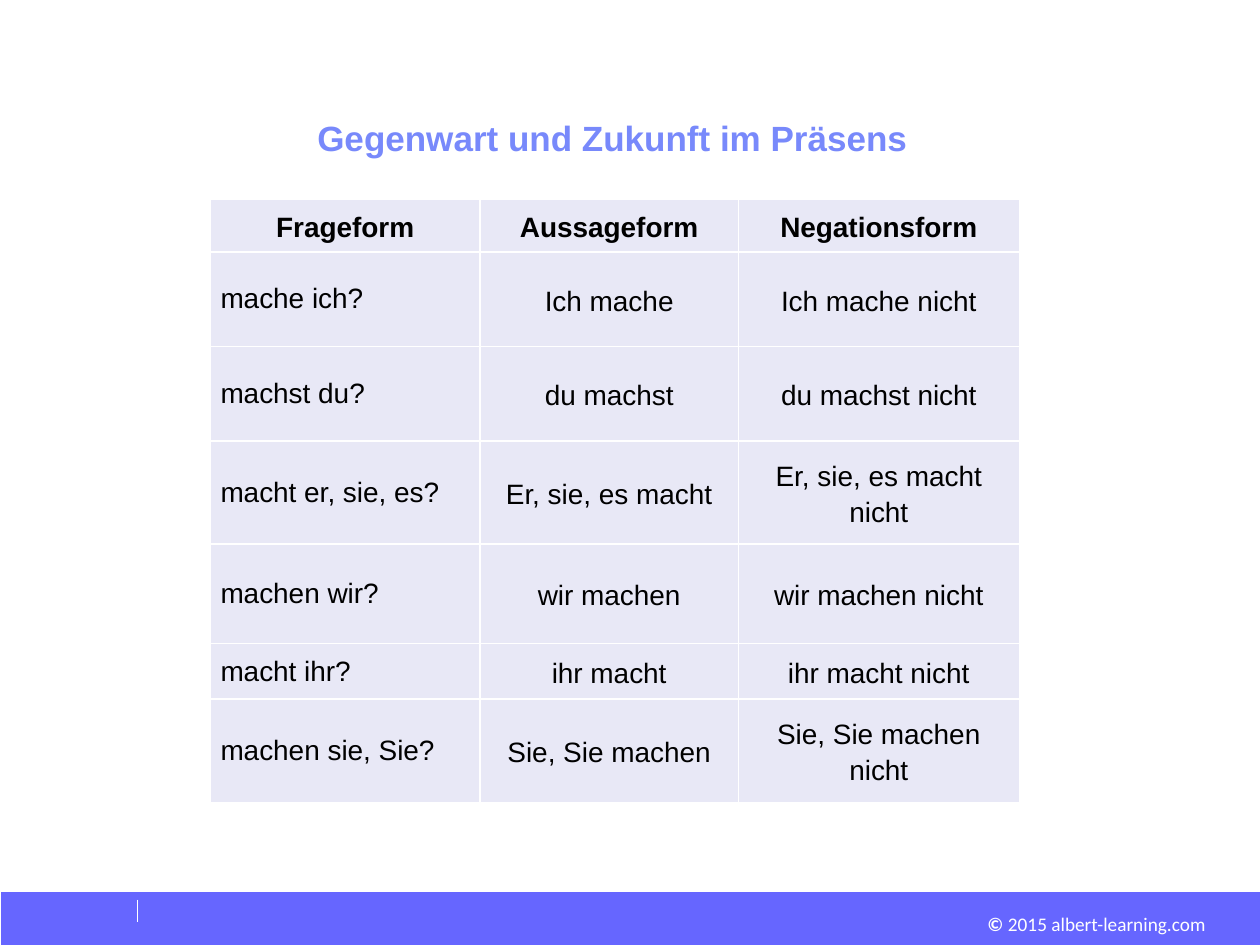
from dataclasses import dataclass

from lxml.etree import SubElement
from pptx import Presentation
from pptx.dml.color import RGBColor
from pptx.enum.shapes import MSO_CONNECTOR, MSO_SHAPE
from pptx.enum.text import MSO_ANCHOR, PP_ALIGN
from pptx.oxml.ns import qn
from pptx.util import Inches, Pt


@dataclass(frozen=True)
class Theme:
    title_color: str = "7889FB"
    text_color: str = "000000"
    cell_color: str = "E8E8F6"
    footer_color: str = "6666FF"
    white: str = "FFFFFF"
    body_font: str = "Arial"
    footer_font: str = "Calibri"
    title_size: float = 20
    table_size: float = 16
    footer_size: float = 11


class SlideBuilder:
    def __init__(self, slide, theme):
        self.slide = slide
        self.theme = theme

    def format_run(self, run, font, size, color, bold=False):
        run.font.name = font
        run.font.size = Pt(size)
        run.font.bold = bold
        run.font.color.rgb = RGBColor.from_string(color)

    def add_bar(self, left, top, width, height):
        bar = self.slide.shapes.add_shape(
            MSO_SHAPE.RECTANGLE, Inches(left), Inches(top), Inches(width), Inches(height))
        bar.shadow.inherit = False
        bar.fill.solid()
        bar.fill.fore_color.rgb = RGBColor.from_string(self.theme.footer_color)
        bar.line.fill.background()

    def add_divider(self, x, top, bottom):
        divider = self.slide.shapes.add_connector(
            MSO_CONNECTOR.STRAIGHT, Inches(x), Inches(top), Inches(x), Inches(bottom))
        divider.line.color.rgb = RGBColor.from_string(self.theme.white)
        divider.line.width = Pt(0.75)
        SubElement(divider._element.spPr, qn("a:effectLst"))

    def add_text_box(self, left, top, width, height):
        box = self.slide.shapes.add_textbox(
            Inches(left), Inches(top), Inches(width), Inches(height))
        return box.text_frame

    def add_title(self, text, left, top, width, height, indent):
        frame = self.add_text_box(left, top, width, height)
        frame.word_wrap = True
        frame.vertical_anchor = MSO_ANCHOR.MIDDLE
        frame.text = text
        paragraph = frame.paragraphs[0]
        paragraph.line_spacing = 0.9
        paragraph._p.get_or_add_pPr().set("marL", str(Inches(indent)))
        self.format_run(paragraph.runs[0], self.theme.body_font,
                        self.theme.title_size, self.theme.title_color, bold=True)

    def add_copyright(self, symbol, text, left, top, width, height):
        frame = self.add_text_box(left, top, width, height)
        frame.word_wrap = False
        frame.margin_left = frame.margin_right = 0
        frame.margin_top = frame.margin_bottom = 0
        paragraph = frame.paragraphs[0]
        paragraph.alignment = PP_ALIGN.RIGHT
        for part, bold in ((symbol, True), (text, False)):
            run = paragraph.add_run()
            run.text = part
            self.format_run(run, self.theme.footer_font,
                            self.theme.footer_size, self.theme.white, bold)

    def add_borders(self, cell):
        properties = cell._tc.get_or_add_tcPr()
        for position, side in enumerate(("a:lnL", "a:lnR", "a:lnT", "a:lnB")):
            border = SubElement(properties, qn(side), w=str(Pt(1)))
            fill = SubElement(border, qn("a:solidFill"))
            SubElement(fill, qn("a:srgbClr"), val=self.theme.white)
            properties.insert(position, border)

    def fill_cell(self, cell, text, header, centered):
        cell.fill.solid()
        cell.fill.fore_color.rgb = RGBColor.from_string(self.theme.cell_color)
        self.add_borders(cell)
        cell.vertical_anchor = MSO_ANCHOR.MIDDLE
        cell.margin_left = cell.margin_right = Inches(0.08)
        cell.margin_top = cell.margin_bottom = Inches(0.03 if header else 0.04)
        cell.text_frame.text = text
        paragraph = cell.text_frame.paragraphs[0]
        if centered:
            paragraph.alignment = PP_ALIGN.CENTER
            paragraph.line_spacing = 1.15
            paragraph.space_after = Pt(10)
        self.format_run(paragraph.runs[0], self.theme.body_font,
                        self.theme.table_size, self.theme.text_color, header)

    def add_table(self, rows, left, top, column_widths, row_heights):
        table = self.slide.shapes.add_table(
            len(rows), len(column_widths), Inches(left), Inches(top),
            Inches(sum(column_widths)), Inches(sum(row_heights))).table
        table.first_row = False
        table.horz_banding = False
        for column, width in zip(table.columns, column_widths):
            column.width = Inches(width)
        for row, height in zip(table.rows, row_heights):
            row.height = Inches(height)
        for row_index, texts in enumerate(rows):
            for column_index, text in enumerate(texts):
                header = row_index == 0
                self.fill_cell(table.cell(row_index, column_index), text,
                               header, centered=header or column_index > 0)


CONJUGATION = [
    ("Frageform", "Aussageform", "Negationsform"),
    ("mache ich?", "Ich mache", "Ich mache nicht"),
    ("machst du?", "du machst", "du machst nicht"),
    ("macht er, sie, es?", "Er, sie, es macht", "Er, sie, es macht nicht"),
    ("machen wir?", "wir machen", "wir machen nicht"),
    ("macht ihr?", "ihr macht", "ihr macht nicht"),
    ("machen sie, Sie?", "Sie, Sie machen", "Sie, Sie machen nicht"),
]


def main():
    presentation = Presentation()
    presentation.slide_width = Inches(10)
    presentation.slide_height = Inches(7.5)
    slide = presentation.slides.add_slide(presentation.slide_layouts[6])
    builder = SlideBuilder(slide, Theme())

    # Footer
    builder.add_bar(0.01, 7.08, 9.99, 0.42)
    builder.add_divider(1.09, 7.14, 7.32)
    builder.add_copyright("© ", "2015 albert-learning.com", 7.79, 7.24, 1.78, 0.19)

    # Title
    builder.add_title("Gegenwart und Zukunft im Präsens", 0.42, 0.92, 10.06, 0.39, indent=2)

    # Conjugation table
    builder.add_table(CONJUGATION, 1.67, 1.58,
                      column_widths=(2.14, 2.05, 2.23),
                      row_heights=(0.42, 0.75, 0.75, 0.82, 0.79, 0.44, 0.82))

    presentation.save("out.pptx")


if __name__ == "__main__":
    main()
